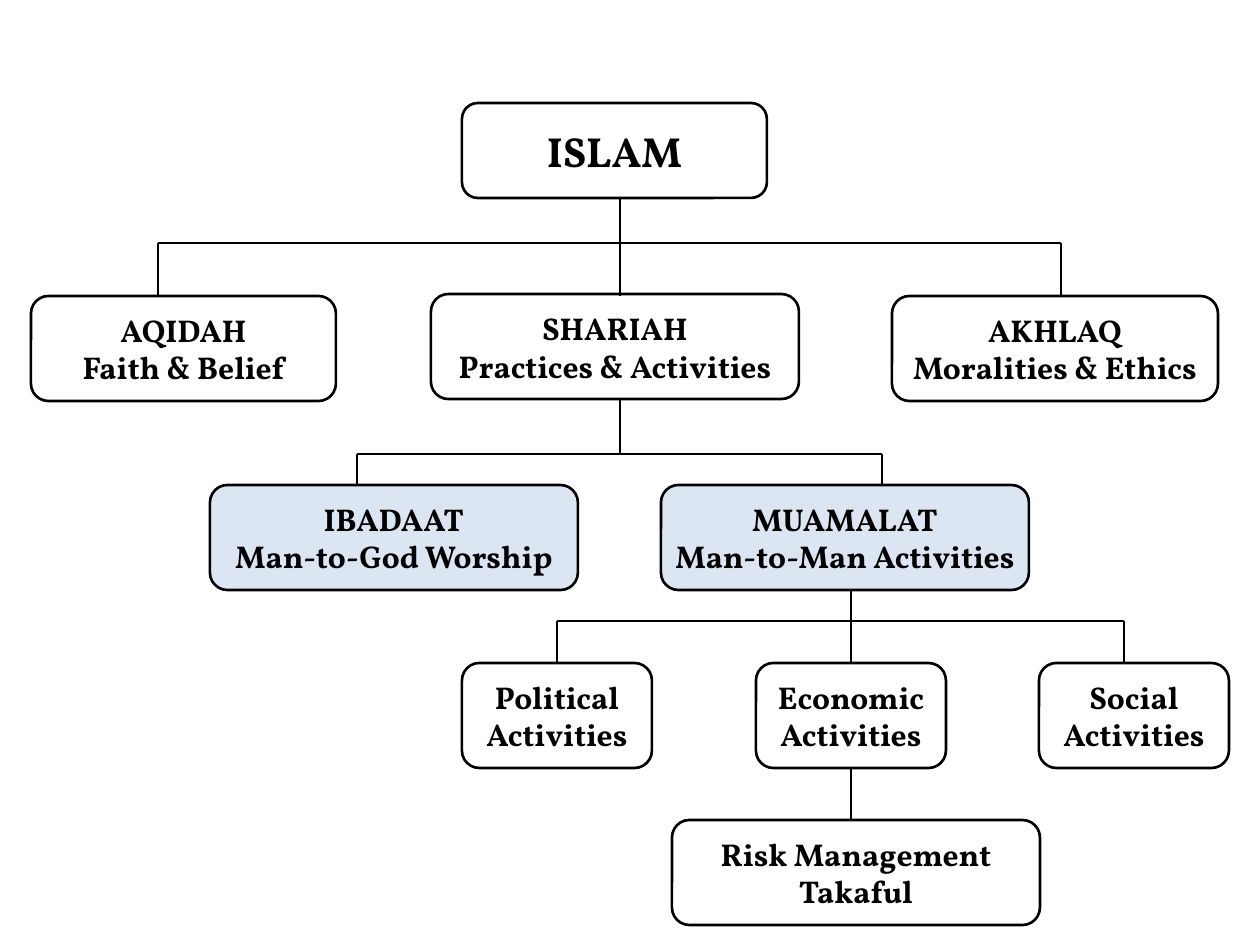
from pptx import Presentation
from pptx.dml.color import RGBColor
from pptx.enum.shapes import MSO_CONNECTOR as Connector, MSO_SHAPE as Shape
from pptx.enum.text import MSO_ANCHOR as Anchor, PP_ALIGN as Align
from pptx.oxml.ns import qn
from pptx.util import Pt
from lxml.etree import SubElement

EMU_PER_PX = 914400 / 126
TOP, BOTTOM = 0, 2
BOX_HEIGHT = 105
WIDE, NARROW = 368, 190


def px(value):
    return round(value * EMU_PER_PX)


def color(hex_string):
    return RGBColor.from_string(hex_string)


class Chart:
    """Draws the boxes and lines of a hierarchy on one slide."""

    ink = "000000"
    tint = "DCE6F2"
    line_width = Pt(1.5)

    def __init__(self, slide):
        self.slide = slide

    def outline(self, line):
        line.color.rgb = color(self.ink)
        line.width = self.line_width

    def box(self, left, top, width, lines, height=BOX_HEIGHT, size=18, fill=None):
        shape = self.slide.shapes.add_shape(
            Shape.ROUNDED_RECTANGLE, px(left), px(top), px(width), px(height))
        shape.shadow.inherit = False
        if fill:
            shape.fill.solid()
            shape.fill.fore_color.rgb = color(fill)
        else:
            shape.fill.background()
        self.outline(shape.line)
        frame = shape.text_frame
        frame.word_wrap = False
        frame.vertical_anchor = Anchor.MIDDLE
        font_format = {"name": "Vollkorn", "size": Pt(size), "bold": True}
        for index, text in enumerate(lines):
            paragraph = frame.add_paragraph() if index else frame.paragraphs[0]
            paragraph.alignment = Align.CENTER
            run = paragraph.add_run()
            run.text = text
            for name, value in font_format.items():
                setattr(run.font, name, value)
            run.font.color.rgb = color(self.ink)
        return shape

    def line(self, x1, y1, x2, y2, begin=None, end=None):
        connector = self.slide.shapes.add_connector(
            Connector.STRAIGHT, px(x1), px(y1), px(x2), px(y2))
        self.outline(connector.line)
        SubElement(connector._element.spPr, qn("a:effectLst"))
        if begin is not None:
            connector.begin_connect(begin, BOTTOM)
        if end is not None:
            connector.end_connect(end, TOP)

    def branch(self, bar_y, drop_y, drops):
        first, last = drops[0][0], drops[-1][0]
        self.line(first, bar_y, last, bar_y)
        for x, child in drops:
            self.line(x, bar_y, x, drop_y, end=child)


def main():
    presentation = Presentation()
    presentation.slide_width, presentation.slide_height = px(1260), px(945)
    chart = Chart(presentation.slides.add_slide(presentation.slide_layouts[6]))

    chart.box(462, 103, 305, ["ISLAM"], height=95, size=24)
    chart.box(31, 296, 305, ["AQIDAH", "Faith & Belief"])
    chart.box(431, 294, WIDE, ["SHARIAH", "Practices & Activities"])
    chart.box(892, 296, 326, ["AKHLAQ", "Moralities & Ethics"])
    chart.box(210, 485, WIDE, ["IBADAAT", "Man-to-God Worship"], fill=chart.tint)
    chart.box(661, 485, WIDE, ["MUAMALAT", "Man-to-Man Activities"], fill=chart.tint)
    political, economic, _ = [
        chart.box(left, 663, NARROW, [kind, "Activities"])
        for left, kind in ((462, "Political"), (756, "Economic"), (1039, "Social"))]
    chart.box(672, 820, WIDE, ["Risk Management", "Takaful"])

    chart.line(620, 198, 620, 296)
    chart.branch(243, 296, [(158, None), (1061, None)])
    chart.line(620, 400, 620, 454)
    chart.branch(454, 485, [(357, None), (882, None)])
    chart.line(851, 590, 851, 663, end=economic)
    chart.branch(621, 663, [(557, political), (1124, None)])
    chart.line(851, 768, 851, 820, begin=economic)

    presentation.save("out.pptx")


if __name__ == "__main__":
    main()
